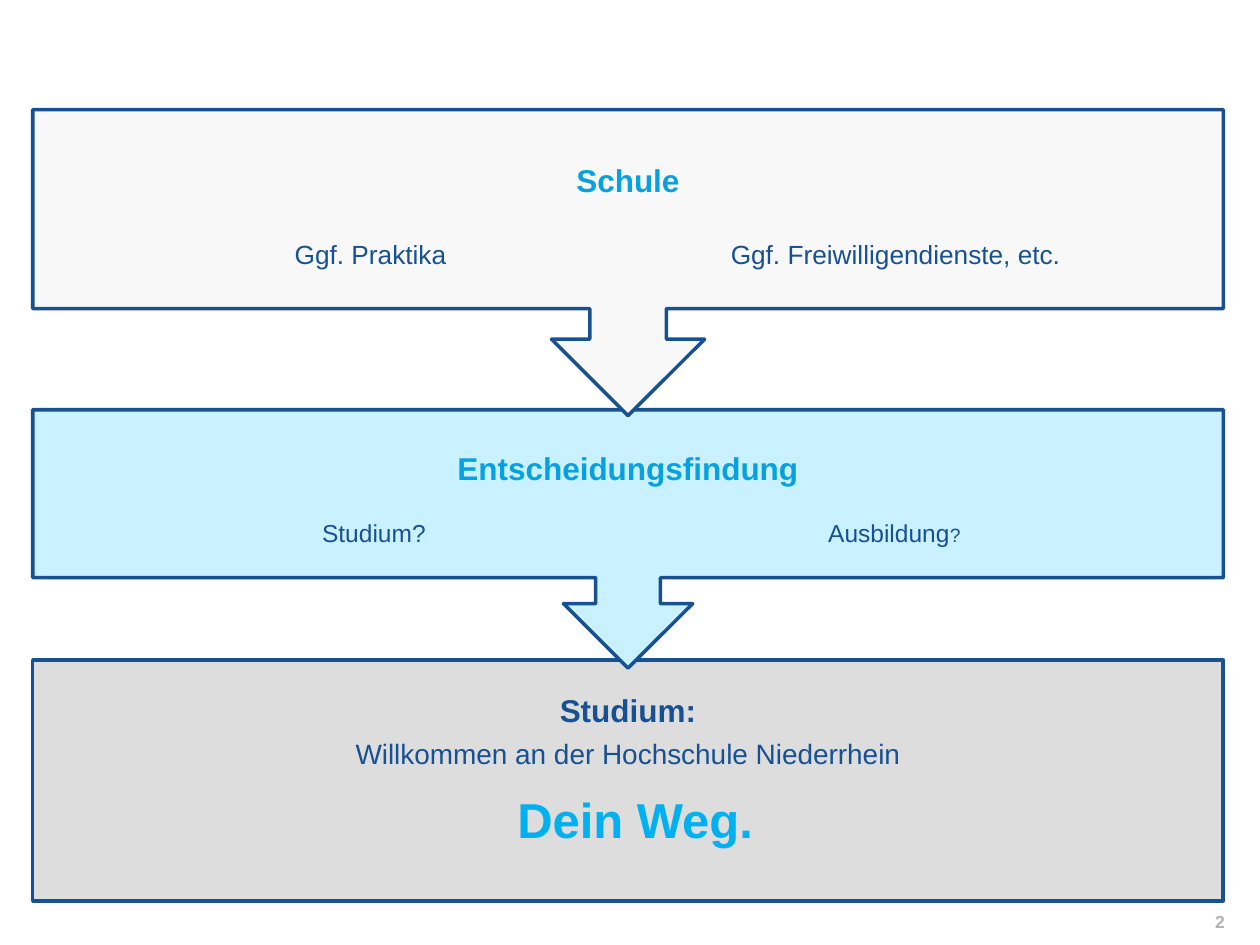
from dataclasses import dataclass

from lxml import etree
from pptx import Presentation
from pptx.dml.color import RGBColor
from pptx.enum.shapes import MSO_SHAPE
from pptx.enum.text import MSO_ANCHOR, PP_ALIGN
from pptx.oxml.ns import qn
from pptx.util import Cm, Pt

RECTANGLE = MSO_SHAPE.RECTANGLE
ARROW_CALLOUT = MSO_SHAPE.UP_ARROW_CALLOUT
TOP, MIDDLE = MSO_ANCHOR.TOP, MSO_ANCHOR.MIDDLE
CENTER, RIGHT = PP_ALIGN.CENTER, PP_ALIGN.RIGHT


@dataclass(frozen=True)
class Theme:
    font: str = "Arial"
    navy: str = "185191"
    heading_blue: str = "07A1E2"
    slogan_blue: str = "00B0F0"
    page_gray: str = "B2B2B2"
    school_fill: str = "F8F8F8"
    decision_fill: str = "C9F1FF"
    study_fill: str = "DDDDDD"
    heading_size: float = 18
    welcome_size: float = 16
    school_size: float = 15
    decision_size: float = 14
    small_size: float = 11
    slogan_size: float = 28
    page_size: float = 10
    line_width: float = 2


THEME = Theme()
BAND_LEFT, BAND_WIDTH = 0.66, 24


def add_band(slide, kind, top, height, fill, rotation=0):
    """Add a full-width outlined band; a rotated callout points downwards."""
    shape = slide.shapes.add_shape(
        kind, Cm(BAND_LEFT), Cm(top), Cm(BAND_WIDTH), Cm(height))
    shape.rotation = rotation
    shape.shadow.inherit = False
    shape.fill.solid()
    shape.fill.fore_color.rgb = RGBColor.from_string(fill)
    shape.line.color.rgb = RGBColor.from_string(THEME.navy)
    shape.line.width = Pt(THEME.line_width)
    # Rounded line corners
    etree.SubElement(shape.line._get_or_add_ln(), qn("a:round"))


def add_label(slide, box, paragraphs, insets, anchor=MIDDLE, align=CENTER):
    """Add a text box; each paragraph is a list of (text, size, colour, bold)."""
    text_box = slide.shapes.add_textbox(*(Cm(value) for value in box))
    text_frame = text_box.text_frame
    text_frame.word_wrap = True
    text_frame.vertical_anchor = anchor
    (text_frame.margin_left, text_frame.margin_top,
     text_frame.margin_right, text_frame.margin_bottom) = map(Cm, insets)
    for index, runs in enumerate(paragraphs):
        paragraph = text_frame.paragraphs[0] if index == 0 else text_frame.add_paragraph()
        paragraph.alignment = align
        paragraph.line_spacing = 0.9
        paragraph.space_after = Pt(round(0.35 * runs[0][1], 1))
        for text, size, color, bold in runs:
            run = paragraph.add_run()
            run.text = text
            run.font.name = THEME.font
            run.font.size = Pt(size)
            run.font.bold = bold
            run.font.color.rgb = RGBColor.from_string(color)


def add_heading(slide, text, top, height):
    add_label(slide, (BAND_LEFT, top, BAND_WIDTH, height),
              [[(text, THEME.heading_size, THEME.heading_blue, True)]], [0.36] * 4)


def add_option(slide, box, *parts):
    """Add one option of a stage, given as (text, size) parts."""
    runs = [(text, size, THEME.navy, False) for text, size in parts]
    add_label(slide, box, [runs], (0.29, 0.05, 0.29, 0.05))


def main():
    presentation = Presentation()
    presentation.slide_width, presentation.slide_height = Cm(25.4), Cm(19.05)
    slide = presentation.slides.add_slide(presentation.slide_layouts[6])

    # Page number
    add_label(slide, (20.7, 18.29, 3.99, 0.51),
              [[("2", THEME.page_size, THEME.page_gray, True)]],
              (0.25, 0.13, 0, 0.13), TOP, RIGHT)

    # Final stage: studies
    add_band(slide, RECTANGLE, 13.31, 4.85, THEME.study_fill)
    add_label(slide, (BAND_LEFT, 13.31, BAND_WIDTH, 4.85),
              [[("Studium:", THEME.heading_size, THEME.navy, True)],
               [("Willkommen an der Hochschule Niederrhein",
                 THEME.welcome_size, THEME.navy, False)]],
              (0.36, 0.71, 0.36, 0.36), TOP)

    # Middle stage: decision
    add_band(slide, ARROW_CALLOUT, 8.26, 5.21, THEME.decision_fill, 180)
    add_heading(slide, "Entscheidungsfindung", 8.89, 1.19)
    add_option(slide, (3.78, 10.16, 7.52, 1.22), ("Studium?", THEME.decision_size))
    add_option(slide, (14.07, 10.16, 7.92, 1.22),
               ("Ausbildung", THEME.decision_size), ("?", THEME.small_size))

    # First stage: school
    add_band(slide, ARROW_CALLOUT, 2.21, 6.17, THEME.school_fill, 180)
    add_heading(slide, "Schule", 2.97, 1.4)
    add_option(slide, (3.71, 4.57, 7.52, 1.17), ("Ggf. Praktika", THEME.school_size))
    add_option(slide, (14.22, 4.57, 7.67, 1.17),
               ("Ggf. Freiwilligendienste, etc.", THEME.school_size))

    # Slogan
    add_label(slide, (3.51, 15.93, 18.59, 1.32),
              [[("Dein Weg.", THEME.slogan_size, THEME.slogan_blue, True)]],
              (0.41, 0.08, 0.41, 0.08))

    presentation.save("out.pptx")


if __name__ == "__main__":
    main()
